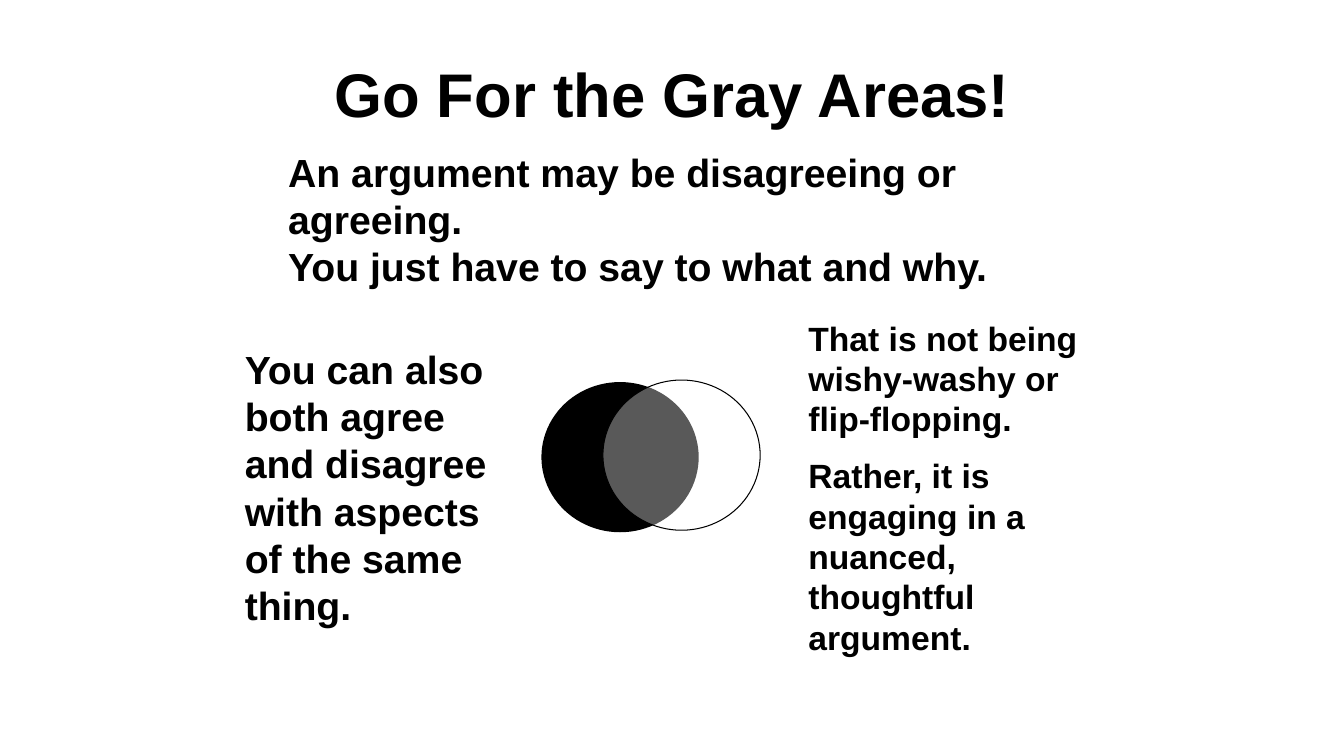
"""Build the slide about finding the gray areas in an argument."""
from lxml.etree import SubElement
from pptx import Presentation
from pptx.dml.color import RGBColor
from pptx.enum.shapes import MSO_SHAPE
from pptx.enum.text import MSO_ANCHOR, PP_ALIGN
from pptx.oxml.ns import qn
from pptx.util import Inches, Pt

BLACK, WHITE = "000000", "FFFFFF"
TITLE = "Go For the Gray Areas!"
TEXTS = [
    ((2.76, 1.42, 8.25, 1.25), 28,
     ["An argument may be disagreeing or agreeing. \vYou just have to say to what and why."]),
    ((7.92, 3.1, 3.25, 3.53), 24,
     ["That is not being wishy-washy or\vflip-flopping.",
      "Rather, it is engaging in a nuanced, thoughtful argument."]),
    ((2.33, 3.38, 2.67, 2.9), 28,
     ["You can also both agree and disagree\vwith aspects of the same thing."]),
]
CIRCLE_SIZE = (1.56, 1.49)
BLACK_CIRCLE = (5.37, 3.79)
WHITE_CIRCLE = (5.98, 3.77)
WHITE_OPACITY = 35


def color(value):
    return RGBColor.from_string(value)


def add_text(slide, box, size, lines, align=PP_ALIGN.LEFT, anchor=MSO_ANCHOR.TOP):
    frame = slide.shapes.add_textbox(*map(Inches, box)).text_frame
    frame.word_wrap = True
    frame.vertical_anchor = anchor
    for index, line in enumerate(lines):
        paragraph = frame.add_paragraph() if index else frame.paragraphs[0]
        paragraph.text = line
        paragraph.alignment = align
        if index:
            paragraph.space_before = Pt(size / 2)
        font = paragraph.font
        font.name, font.size, font.bold = "Arial", Pt(size), True
        font.color.rgb = color(BLACK)


def add_circle(slide, position, fill):
    circle = slide.shapes.add_shape(MSO_SHAPE.OVAL, *map(Inches, position + CIRCLE_SIZE))
    circle.shadow.inherit = False
    circle.fill.solid()
    circle.fill.fore_color.rgb = color(fill)
    circle.line.fill.background()
    return circle


def main():
    presentation = Presentation()
    presentation.slide_width, presentation.slide_height = Inches(13.33), Inches(7.5)
    slide = presentation.slides.add_slide(presentation.slide_layouts[6])

    add_text(slide, (0.67, 0.3, 12, 1.25), 44, [TITLE], PP_ALIGN.CENTER, MSO_ANCHOR.MIDDLE)
    add_circle(slide, BLACK_CIRCLE, BLACK)
    overlay = add_circle(slide, WHITE_CIRCLE, WHITE)
    fill_color = overlay.fill._xPr.find(qn("a:solidFill"))[0]
    SubElement(fill_color, qn("a:alpha"), val=str(WHITE_OPACITY * 1000))
    overlay.line.color.rgb = color(BLACK)
    overlay.line.width = Pt(0.75)
    for box, size, lines in TEXTS:
        add_text(slide, box, size, lines)

    presentation.save("out.pptx")


if __name__ == "__main__":
    main()
